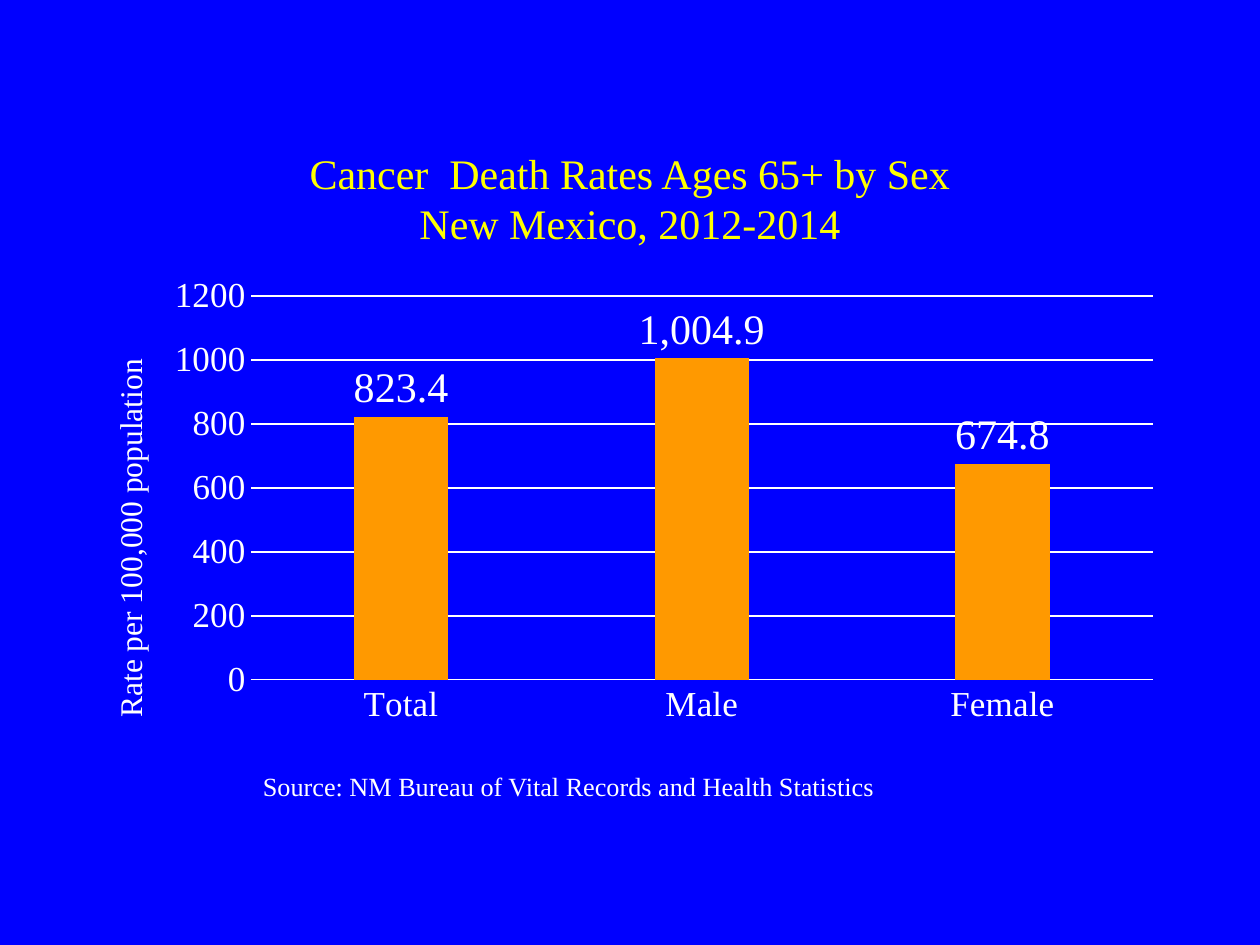
from dataclasses import dataclass

from lxml.etree import SubElement
from pptx import Presentation
from pptx.chart.data import CategoryChartData
from pptx.dml.color import RGBColor
from pptx.enum.chart import XL_CHART_TYPE, XL_LABEL_POSITION, XL_TICK_MARK
from pptx.enum.text import MSO_ANCHOR, PP_ALIGN
from pptx.oxml import parse_xml
from pptx.oxml.ns import nsdecls, qn
from pptx.util import Cm, Pt

FONT = "Times New Roman"
BLUE, YELLOW, WHITE, ORANGE = "0000FF", "FFFF00", "FFFFFF", "FF9900"


@dataclass
class Caption:
    text: str
    left: float
    top: float
    width: float
    height: float
    size: int
    color: str
    align: PP_ALIGN
    anchor: MSO_ANCHOR


CAPTIONS = [
    Caption("Cancer  Death Rates Ages 65+ by Sex\vNew Mexico, 2012-2014",
            1.9, 2.8, 21.6, 2.38, 24, YELLOW, PP_ALIGN.CENTER, MSO_ANCHOR.MIDDLE),
    Caption("Source: NM Bureau of Vital Records and Health Statistics",
            5.05, 15.4, 15.88, 0.9, 15, WHITE, PP_ALIGN.LEFT, MSO_ANCHOR.TOP),
]
RATES = {"Total": 823.4, "Male": 1004.9, "Female": 674.8}


def rgb(color: str) -> RGBColor:
    return RGBColor.from_string(color)


def set_font(font, size: int, color: str = WHITE) -> None:
    font.name = FONT
    font.size = Pt(size)
    font.bold = False
    font.color.rgb = rgb(color)


def set_line(line, color: str = WHITE) -> None:
    line.color.rgb = rgb(color)
    line.width = Pt(0.75)


def manual_layout(**values):
    """Return a c:layout element placed by fractions of the chart."""
    layout = parse_xml(f"<c:layout {nsdecls('c')}><c:manualLayout/></c:layout>")
    for name, value in values.items():
        SubElement(layout[0], qn(f"c:{name}")).set("val", str(value))
    return layout


def remove_layout(element) -> None:
    for layout in element.findall(qn("c:layout")):
        element.remove(layout)


def add_caption(slide, item: Caption) -> None:
    box = slide.shapes.add_textbox(
        Cm(item.left), Cm(item.top), Cm(item.width), Cm(item.height))
    tf = box.text_frame
    tf.word_wrap = True
    tf.vertical_anchor = item.anchor
    p = tf.paragraphs[0]
    p.text = item.text
    p.alignment = item.align
    set_font(p.font, item.size, item.color)


def style_value_axis(axis) -> None:
    axis.minimum_scale, axis.maximum_scale, axis.major_unit = 0, 1200, 200
    axis.major_tick_mark = XL_TICK_MARK.NONE
    axis.format.line.fill.background()
    set_line(axis.major_gridlines.format.line)
    set_font(axis.tick_labels.font, 20)
    axis.tick_labels.number_format = "0"
    axis.tick_labels.number_format_is_linked = False

    tf = axis.axis_title.text_frame
    tf.text = "Rate per 100,000 population"
    set_font(tf.paragraphs[0].font, 18)
    body = tf._txBody.find(qn("a:bodyPr"))
    body.set("rot", "-5400000")
    body.set("vert", "horz")
    title = axis.axis_title._element
    remove_layout(title)
    title.find(qn("c:tx")).addnext(
        manual_layout(xMode="edge", yMode="edge", x=0.01, y=0.17))


def add_rate_chart(slide) -> None:
    data = CategoryChartData(number_format="#,##0.0")
    data.categories = list(RATES)
    data.add_series("Series 1", list(RATES.values()))
    chart = slide.shapes.add_chart(
        XL_CHART_TYPE.COLUMN_CLUSTERED,
        Cm(1.9), Cm(5.49), Cm(21.6), Cm(9.6), data).chart
    chart.has_legend = False
    chart.has_title = False
    set_font(chart.font, 10)

    axis = chart.category_axis
    axis.major_tick_mark = XL_TICK_MARK.NONE
    set_line(axis.format.line)
    set_font(axis.tick_labels.font, 20)
    style_value_axis(chart.value_axis)

    plot = chart.plots[0]
    plot.vary_by_categories = False
    plot.gap_width, plot.overlap = 219, -27
    series = plot.series[0]
    series.format.fill.solid()
    series.format.fill.fore_color.rgb = rgb(ORANGE)
    labels = series.data_labels
    labels.show_value = True
    labels.position = XL_LABEL_POSITION.OUTSIDE_END
    labels.number_format = "#,##0.0"
    labels.number_format_is_linked = False
    set_font(labels.font, 24)

    area = chart._chartSpace.chart.plotArea
    remove_layout(area)
    area.insert(0, manual_layout(
        layoutTarget="inner", xMode="edge", yMode="edge",
        x=0.146, y=0.05, w=0.842, h=0.806))


def main() -> None:
    prs = Presentation()
    prs.slide_width, prs.slide_height = Cm(25.4), Cm(19.05)
    slide = prs.slides.add_slide(prs.slide_layouts[6])
    slide.background.fill.solid()
    slide.background.fill.fore_color.rgb = rgb(BLUE)
    for item in CAPTIONS:
        add_caption(slide, item)
    add_rate_chart(slide)
    prs.save("out.pptx")


if __name__ == "__main__":
    main()
